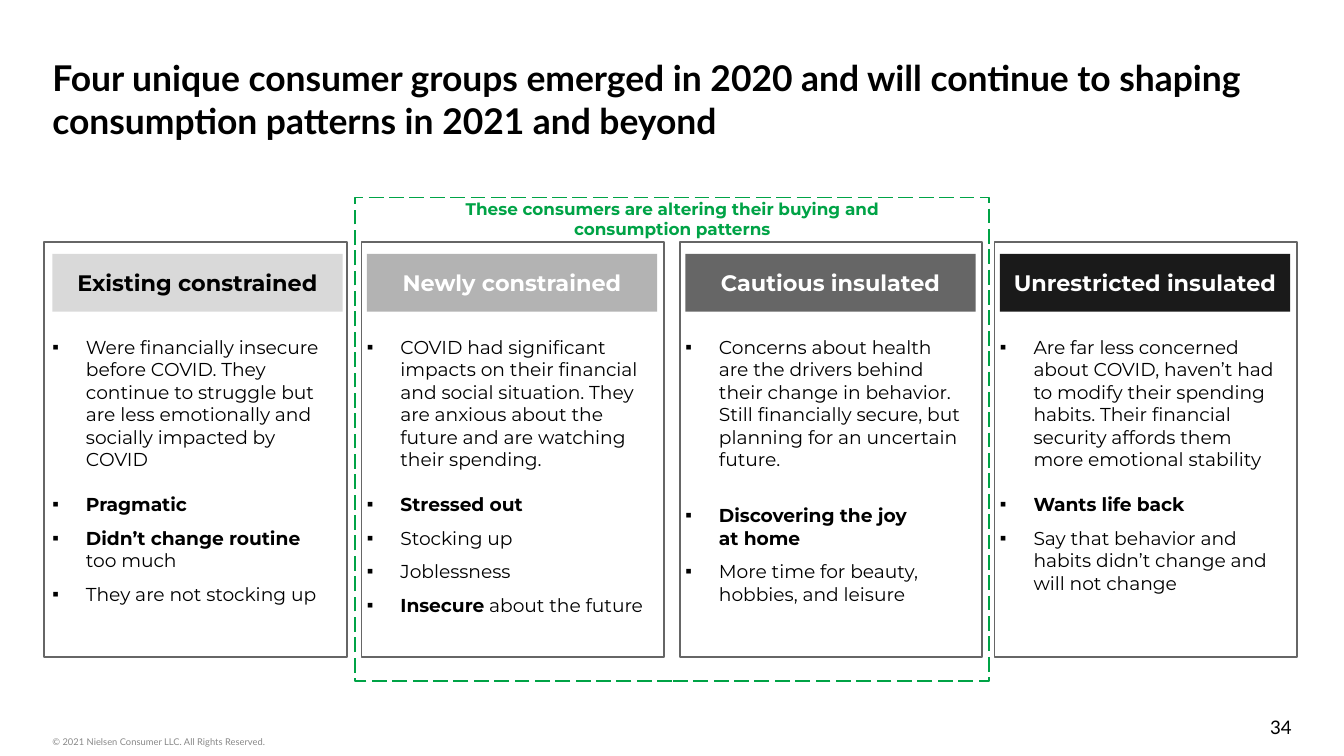
from lxml import etree
from pptx import Presentation
from pptx.dml.color import RGBColor
from pptx.enum.dml import MSO_LINE_DASH_STYLE as Dash
from pptx.enum.shapes import MSO_SHAPE as Shape
from pptx.enum.text import MSO_ANCHOR as Anchor, PP_ALIGN as Align
from pptx.oxml.ns import qn
from pptx.util import Inches, Pt

BLACK = RGBColor(0x00, 0x00, 0x00)
WHITE = RGBColor(0xFF, 0xFF, 0xFF)
GREEN = RGBColor(0x00, 0xA3, 0x46)
FRAME_GRAY = RGBColor(0x66, 0x66, 0x66)
FOOTER_GRAY = RGBColor(0x88, 0x88, 0x88)
LIGHT = RGBColor(0xD9, 0xD9, 0xD9)
SILVER = RGBColor(0xB3, 0xB3, 0xB3)
DARK = RGBColor(0x1A, 0x1A, 0x1A)

# Content
TITLE = ("Four unique consumer groups emerged in 2020 and will continue to shaping "
         "consumption patterns in 2021 and beyond")
CALLOUT = ["These consumers are altering their buying and", "consumption patterns"]
COPYRIGHT = "© 2021 Nielsen Consumer LLC. All Rights Reserved."
PAGE_NUMBER = "34"

# Each bullet: space before in points, then (text, bold) runs
GROUPS = [
    {"name": "Existing constrained", "fill": LIGHT, "color": BLACK,
     "left": 0.39, "frame_left": 0.33, "bullets": [
         (0, [("Were financially insecure before COVID. They continue to struggle but are "
               "less emotionally and socially impacted by COVID", False)]),
         (12, [("Pragmatic", True)]),
         (6, [("Didn’t change routine ", True), ("too much", False)]),
         (6, [("They are not stocking up", False)])]},
    {"name": "Newly constrained", "fill": SILVER, "color": WHITE,
     "left": 2.73, "frame_left": 2.69, "bullets": [
         (0, [("COVID had significant impacts on their financial and social situation. They "
               "are anxious about the future and are watching their spending.", False)]),
         (12, [("Stressed out", True)]),
         (6, [("Stocking up", False)]),
         (6, [("Joblessness", False)]),
         (6, [("Insecure", True), (" about the future", False)])]},
    {"name": "Cautious insulated", "fill": FRAME_GRAY, "color": WHITE,
     "left": 5.1, "frame_left": 5.06, "bullets": [
         (0, [("Concerns about health are the drivers behind their change in behavior. Still "
               "financially secure, but planning for an uncertain future.", False)]),
         (18, [("Discovering the joy \nat home", True)]),
         (6, [("More time for beauty, hobbies, and leisure", False)])]},
    {"name": "Unrestricted insulated", "fill": DARK, "color": WHITE,
     "left": 7.44, "frame_left": 7.4, "bullets": [
         (0, [("Are far less concerned about COVID, haven’t had to modify their spending "
               "habits. Their financial security affords them more emotional stability",
               False)]),
         (12, [("Wants life back", True)]),
         (6, [("Say that behavior and habits didn’t change and will not change", False)])]},
]

# Layout
COLUMN_WIDTH = 2.16
HEADER_TOP, HEADER_HEIGHT = 1.89, 0.43
BULLETS_TOP, BULLETS_HEIGHT = 2.45, 2.12
FRAME_TOP, FRAME_WIDTH, FRAME_HEIGHT = 1.8, 2.25, 3.09
BULLET_INDENT = 0.25

# Widescreen, 16:9
prs = Presentation()
prs.slide_width = Inches(10)
prs.slide_height = prs.slide_width * 9 // 16
slide = prs.slides.add_slide(prs.slide_layouts[6])


def style(font, size, color, bold=False, name="Montserrat"):
    values = {"name": name, "size": Pt(size), "bold": bold}
    for attribute, value in values.items():
        setattr(font, attribute, value)
    font.color.rgb = color


def set_frame(frame, insets, anchor=Anchor.TOP):
    frame.word_wrap = True
    frame.vertical_anchor = anchor
    for side, inset in zip(("left", "top", "right", "bottom"), insets):
        setattr(frame, f"margin_{side}", Inches(inset))


def add_text(box, lines, insets, align=Align.LEFT, anchor=Anchor.TOP, **font):
    frame = slide.shapes.add_textbox(*map(Inches, box)).text_frame
    set_frame(frame, insets, anchor)
    for i, line in enumerate(lines):
        paragraph = frame.add_paragraph() if i else frame.paragraphs[0]
        paragraph.alignment = align
        run = paragraph.add_run()
        run.text = line
        style(run.font, **font)


def add_rect(box, fill=None, line=None, dash=None):
    rect = slide.shapes.add_shape(Shape.RECTANGLE, *map(Inches, box))
    rect.shadow.inherit = False
    if fill is None:
        rect.fill.background()
    else:
        rect.fill.solid()
        rect.fill.fore_color.rgb = fill
    if line is None:
        rect.line.fill.background()
    else:
        rect.line.color.rgb = line
        rect.line.width = Pt(1)
        rect.line.dash_style = dash
    return rect


def add_bullet(paragraph):
    props = paragraph._p.get_or_add_pPr()
    props.set("marL", str(Inches(BULLET_INDENT)))
    props.set("indent", str(-Inches(BULLET_INDENT)))
    color = etree.SubElement(props, qn("a:buClr"))
    etree.SubElement(color, qn("a:srgbClr")).set("val", str(BLACK))
    etree.SubElement(props, qn("a:buFont")).set("typeface", "Arial")
    etree.SubElement(props, qn("a:buChar")).set("char", "▪")


def add_header(group):
    header = add_rect((group["left"], HEADER_TOP, COLUMN_WIDTH, HEADER_HEIGHT), group["fill"])
    set_frame(header.text_frame, (0.1, 0.05, 0.1, 0.05), Anchor.MIDDLE)
    paragraph = header.text_frame.paragraphs[0]
    paragraph.alignment = Align.CENTER
    run = paragraph.add_run()
    run.text = group["name"]
    style(run.font, 12, group["color"], bold=True)


def add_bullets(group):
    box = (group["left"], BULLETS_TOP, COLUMN_WIDTH, BULLETS_HEIGHT)
    frame = slide.shapes.add_textbox(*map(Inches, box)).text_frame
    set_frame(frame, (0, 0.05, 0.1, 0.05))
    for i, (space, runs) in enumerate(group["bullets"]):
        paragraph = frame.add_paragraph() if i else frame.paragraphs[0]
        add_bullet(paragraph)
        if space:
            paragraph.space_before = Pt(space)
        for text, bold in runs:
            for j, line in enumerate(text.split("\n")):
                if j:
                    paragraph.add_line_break()
                run = paragraph.add_run()
                run.text = line
                style(run.font, 10, BLACK, bold)


# Footer and title
add_text((0.39, 5.43, 5.54, 0.2), [COPYRIGHT], (0, 0.05, 0, 0.05),
         size=5, color=FOOTER_GRAY, name="Lato")
add_text((7.36, 5.26, 2.25, 0.3), [PAGE_NUMBER], (0, 0.05, 0, 0.05),
         Align.RIGHT, Anchor.MIDDLE, size=10, color=BLACK, name="Lato")
add_text((0.39, 0.32, 9.22, 0.43), [TITLE], (0, 0.1, 0, 0.1),
         size=19, color=BLACK, bold=True, name="Lato")

# Group headers, then descriptions
for group in GROUPS:
    add_header(group)
for group in GROUPS:
    add_bullets(group)

# Dashed highlight around the two middle groups
add_rect((2.64, 1.47, 4.72, 3.6), line=GREEN, dash=Dash.LONG_DASH)
add_text((2.64, 1.43, 4.72, 0.4), CALLOUT, (0.1, 0.05, 0.1, 0.05),
         Align.CENTER, size=9, color=GREEN, bold=True)

# Column frames
for group in GROUPS:
    add_rect((group["frame_left"], FRAME_TOP, FRAME_WIDTH, FRAME_HEIGHT), line=FRAME_GRAY)

prs.save("out.pptx")
